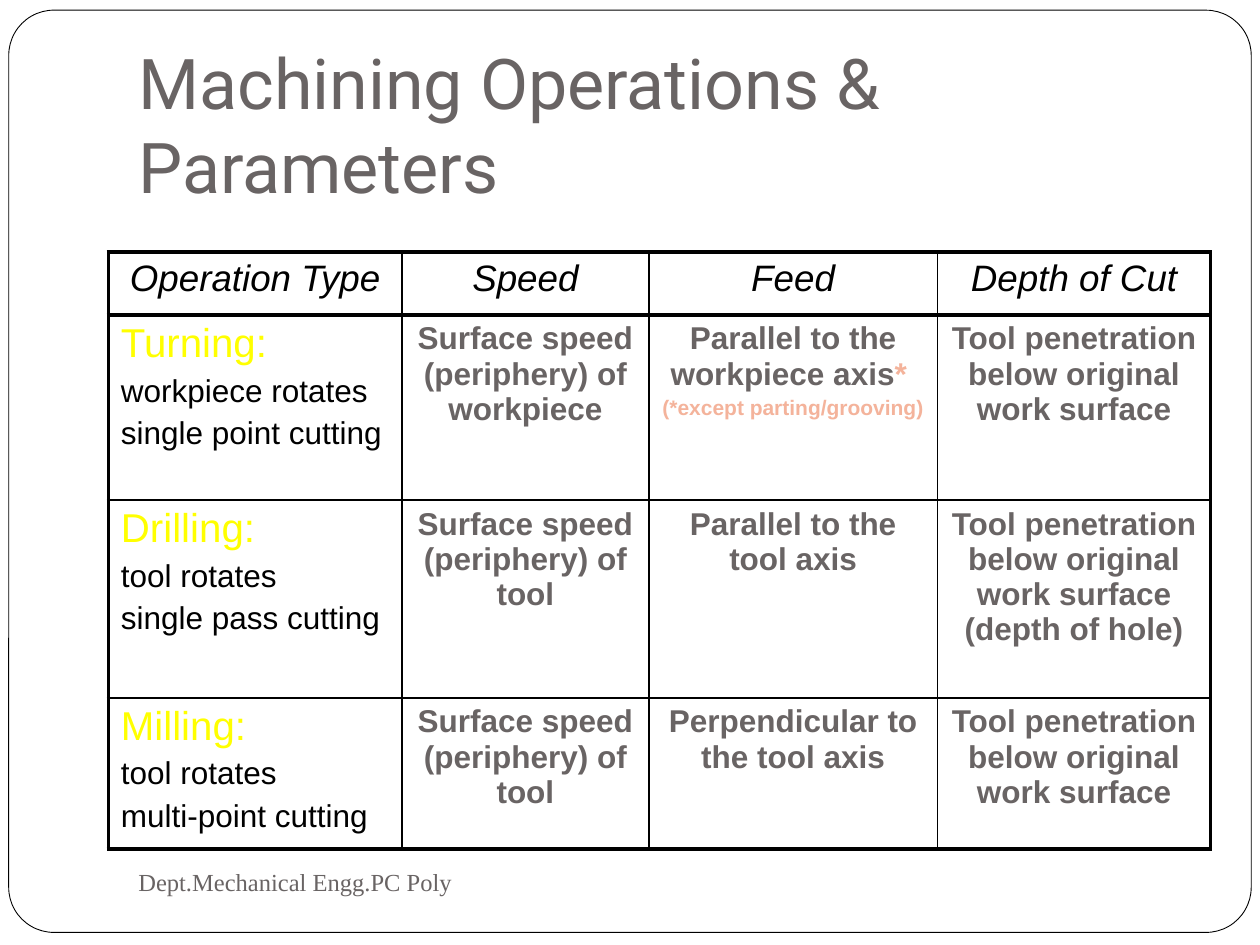
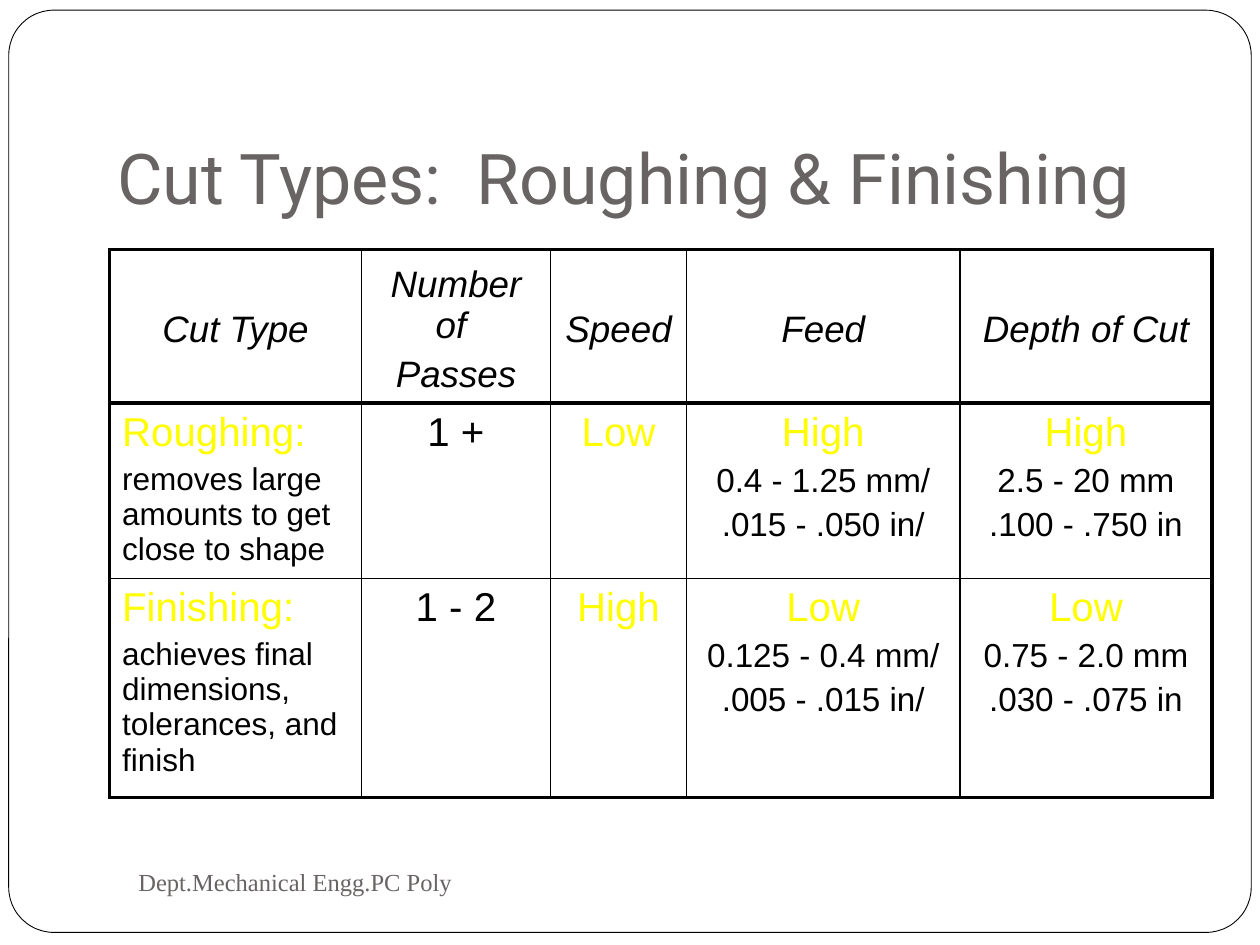
from lxml import etree
from pptx import Presentation
from pptx.dml.color import RGBColor
from pptx.enum import shapes, text
from pptx.oxml import ns
from pptx.util import Pt

# Shared look
COLORS = {"paper": "FFFFFF", "ink": "000000", "grey": "696464",
          "yellow": "FFFF00", "peach": "F4B39B"}
# style: font, size, colour, bold, italic
STYLES = {
    "title": ("Roboto", 40, "grey", False, False),
    "footer": ("Times New Roman", 14, "grey", False, False),
    "head": ("Arial", 21, "ink", False, True),
    "key": ("Arial", 23, "yellow", False, False),
    "count": ("Arial", 23, "ink", False, False),
    "detail": ("Arial", 18, "ink", False, False),
    "range": ("Arial", 19, "ink", False, False),
    "fact": ("Arial", 18, "grey", True, False),
    "star": ("Arial", 18, "peach", True, False),
    "note": ("Arial", 12, "peach", True, False),
}
FOOTER = "Dept.Mechanical Engg.PC Poly"
THICK, THIN = 2.25, 1
SPACER = "spacer"


# A cell is a list of paragraphs, a paragraph a list of (style, text) runs
def lines(style, *texts):
    return [[(style, t)] for t in texts]


def keyed(key, style, *texts):
    return lines("key", key) + lines(style, *texts)


def header(*labels):
    return [lines("head", *label.split("|")) for label in labels]


# Content
SLIDES = [
    {
        "title": "Machining Operations & Parameters",
        "title_box": (72, 59.8, 648, 66.2),
        "table_at": (61.9, 144),
        "cols": [167.8, 141.1, 164.9, 156.2],
        "heights": [36, 86.4, 19.4, 93.6, 19.4, 86.4],
        "head_anchor": text.MSO_ANCHOR.TOP,
        "rows": [
            header("Operation Type", "Speed", "Feed", "Depth of Cut"),
            [keyed("Turning:", "detail", "workpiece rotates", "single point cutting"),
             lines("fact", "Surface speed (periphery) of workpiece"),
             [[("fact", "Parallel to the workpiece axis"), ("star", "* ")],
              [("note", "(*except parting/grooving)")]],
             lines("fact", "Tool penetration below original work surface")],
            SPACER,
            [keyed("Drilling:", "detail", "tool rotates", "single pass cutting"),
             lines("fact", "Surface speed (periphery) of tool"),
             lines("fact", "Parallel to the tool axis"),
             lines("fact", "Tool penetration below original work surface (depth of hole)")],
            SPACER,
            [keyed("Milling:", "detail", "tool rotates", "multi-point cutting"),
             lines("fact", "Surface speed (periphery) of tool"),
             lines("fact", "Perpendicular to the tool axis"),
             lines("fact", "Tool penetration below original work surface")],
        ],
    },
    {
        "title": "Cut Types:  Roughing & Finishing",
        "title_box": (59.8, 41.8, 606.2, 90),
        "table_at": (62.6, 142.6),
        "cols": [144, 108, 77.8, 156.2, 144],
        "heights": [87.8, 100.1, 125.3],
        "head_anchor": text.MSO_ANCHOR.MIDDLE,
        "rows": [
            header("Cut Type", "Number of |Passes", "Speed", "Feed", "Depth of Cut"),
            [keyed("Roughing:", "detail", "removes large amounts to get close to shape"),
             lines("count", "1 +"),
             lines("key", "Low"),
             keyed("High", "range", "0.4 - 1.25 mm/", ".015 - .050 in/"),
             keyed("High", "range", "2.5 - 20 mm", ".100 - .750 in")],
            [keyed("Finishing:", "detail", "achieves final dimensions, tolerances, and finish"),
             lines("count", "1 - 2"),
             lines("key", "High"),
             keyed("Low", "range", "0.125 - 0.4 mm/", ".005 - .015 in/"),
             keyed("Low", "range", "0.75 - 2.0 mm", ".030 - .075 in")],
        ],
    },
]


def rgb(name):
    return RGBColor.from_string(COLORS[name])


def write(tf, paragraphs, align):
    for i, runs in enumerate(paragraphs):
        p = tf.paragraphs[0] if i == 0 else tf.add_paragraph()
        p.alignment = align
        if i:
            p.space_before = Pt(round(STYLES[runs[0][0]][1] * 0.22, 1))
        for style, words in runs:
            r = p.add_run()
            r.text = words
            f = r.font
            f.name, size, color, f.bold, f.italic = STYLES[style]
            f.size = Pt(size)
            f.color.rgb = rgb(color)


def add_text(s, box, style, words, anchor):
    tf = s.shapes.add_textbox(*map(Pt, box)).text_frame
    tf.word_wrap = True
    tf.vertical_anchor = anchor
    write(tf, lines(style, words), text.PP_ALIGN.LEFT)
    return tf


def add_frame(s):
    sp = s.shapes.add_shape(shapes.MSO_SHAPE.ROUNDED_RECTANGLE,
                            Pt(5), Pt(5.8), Pt(710), Pt(527))
    sp.adjustments[0] = 0.049
    sp.shadow.inherit = False
    sp.fill.solid()
    sp.fill.fore_color.rgb = rgb("paper")
    sp.line.color.rgb = rgb("ink")
    sp.line.width = Pt(0.5)


def set_borders(cell, widths):
    # Borders come before the fill in the cell properties; width 0 is no line
    tcPr = cell._tc.get_or_add_tcPr()
    for i, (side, width) in enumerate(zip("LRTB", widths)):
        ln = etree.Element(ns.qn(f"a:ln{side}"), w=str(int(Pt(width))))
        if width:
            fill = etree.SubElement(ln, ns.qn("a:solidFill"))
            etree.SubElement(fill, ns.qn("a:srgbClr"), val=COLORS["ink"])
        else:
            etree.SubElement(ln, ns.qn("a:noFill"))
        tcPr.insert(i, ln)


def add_grid(s, data):
    rows, cols, heights = data["rows"], data["cols"], data["heights"]
    size = (sum(cols), sum(heights))
    table = s.shapes.add_table(len(rows), len(cols),
                               *map(Pt, data["table_at"] + size)).table
    table.first_row = table.horz_banding = False
    for column, width in zip(table.columns, cols):
        column.width = Pt(width)
    for row, height in zip(table.rows, heights):
        row.height = Pt(height)

    # Thick edge and header rule, no rule above a spacer row, thin elsewhere
    across = [THICK, THICK]
    across += [0 if row == SPACER else THIN for row in rows[2:]] + [THICK]
    down = [THICK] + [THIN] * (len(cols) - 1) + [THICK]

    for i, row in enumerate(rows):
        for j in range(len(cols)):
            cell = table.cell(i, j)
            cell.fill.background()
            cell.margin_bottom = 0
            set_borders(cell, (down[j], down[j + 1], across[i], across[i + 1]))
            if row == SPACER:
                p = cell.text_frame.paragraphs[0]
                p._p.get_or_add_endParaRPr().set("sz", "1000")
                continue
            if i == 0:
                cell.vertical_anchor = data["head_anchor"]
            left = i > 0 and j == 0
            write(cell.text_frame, row[j],
                  text.PP_ALIGN.LEFT if left else text.PP_ALIGN.CENTER)


def main():
    prs = Presentation()
    prs.slide_width, prs.slide_height = Pt(720), Pt(540)
    for data in SLIDES:
        s = prs.slides.add_slide(prs.slide_layouts[6])
        add_frame(s)
        add_text(s, (72, 486, 311.8, 36), "footer", FOOTER, text.MSO_ANCHOR.MIDDLE)
        tf = add_text(s, data["title_box"], "title", data["title"],
                      text.MSO_ANCHOR.BOTTOM)
        tf.margin_bottom = Pt(7.2)
        add_grid(s, data)
    prs.save("out.pptx")


if __name__ == "__main__":
    main()
